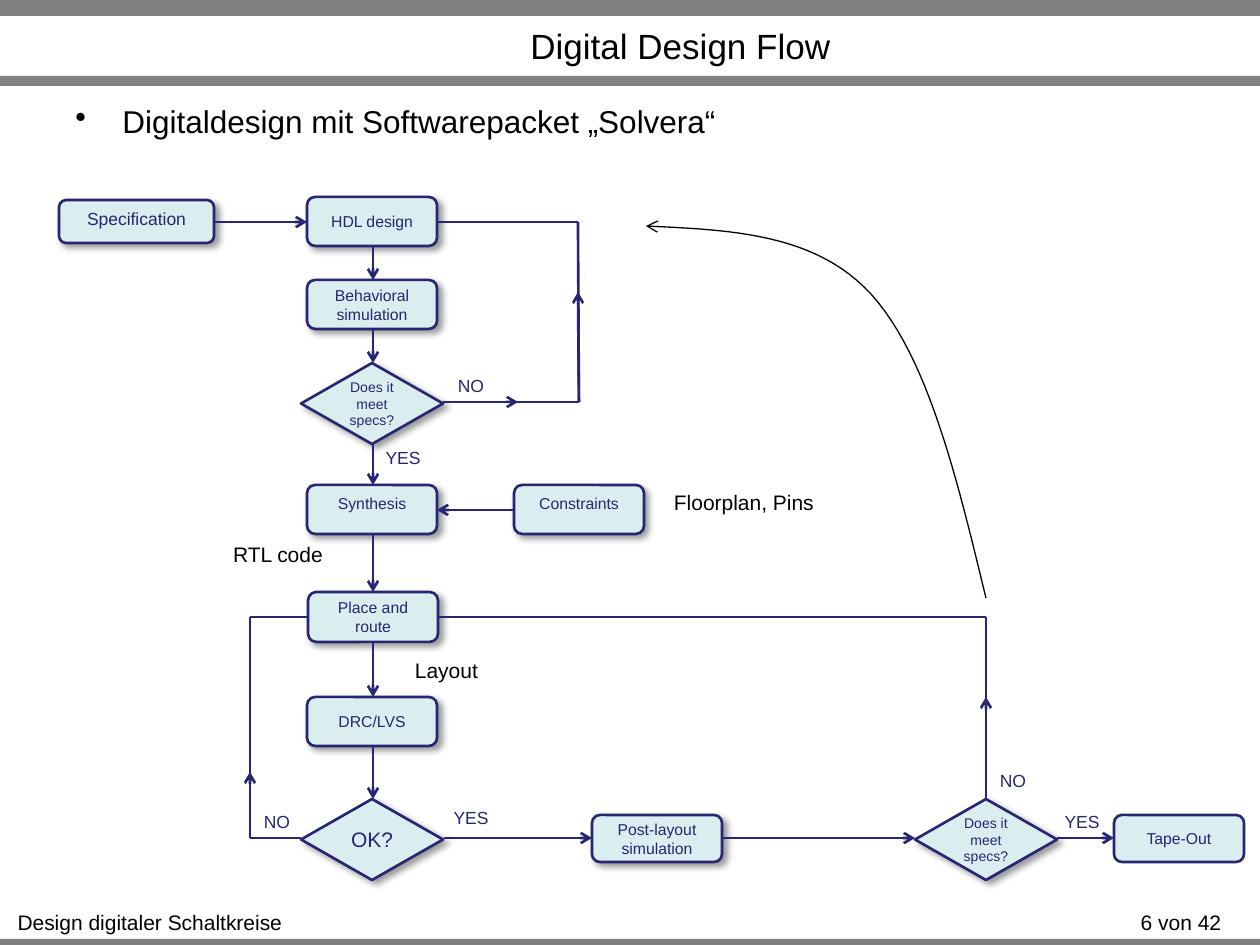
from dataclasses import dataclass

from lxml.etree import SubElement
from pptx import Presentation
from pptx.dml.color import RGBColor
from pptx.enum.shapes import MSO_CONNECTOR, MSO_SHAPE
from pptx.enum.text import MSO_ANCHOR, PP_ALIGN
from pptx.oxml.ns import qn
from pptx.util import Pt

SCALE = 914400 / 126  # EMU in one px


@dataclass(frozen=True)
class Theme:
    ink: RGBColor = RGBColor(0, 0, 0)
    navy: RGBColor = RGBColor(0x26, 0x26, 0x73)
    pale: RGBColor = RGBColor(0xDA, 0xED, 0xEF)
    grey: RGBColor = RGBColor(0x80, 0x80, 0x80)
    font: str = "Arial"
    title: int = 20
    body: int = 18
    note: int = 12
    label: int = 10
    step: int = 9
    test: int = 8
    bold: float = 1.5
    thin: float = 0.75


THEME = Theme()
TOP, MID = MSO_ANCHOR.TOP, MSO_ANCHOR.MIDDLE
STEP, TEST = MSO_SHAPE.ROUNDED_RECTANGLE, MSO_SHAPE.FLOWCHART_DECISION


def emu(*vals):
    return [round(v * SCALE) for v in vals]


def shift(box, x, y):
    return box[0] + x, box[1] + y


def assign(item, vals):
    for name, val in vals.items():
        setattr(item, name, val)


def write(shape, text, size, color, align=PP_ALIGN.CENTER, **frame):
    area = shape.text_frame
    assign(area, frame)
    area.text = text
    for para in area.paragraphs:
        para.alignment = align
        assign(para.font, {"name": THEME.font, "size": Pt(size)})
        para.font.color.rgb = color


def label(slide, box, text, size, color, wrap=False, **form):
    shape = slide.shapes.add_textbox(*emu(*box))
    write(shape, text, size, color, word_wrap=wrap, **form)
    return shape


def stroke(shape, color, width, head=False):
    """Style a line, with an open arrowhead at its end if head is set."""
    shape.line.color.rgb = color
    shape.line.width = Pt(width)
    if head:
        line = shape.element.spPr.find(qn("a:ln"))
        SubElement(line, qn("a:tailEnd"), type="arrow")


def shade(shape):
    """Give the shape a soft shadow to the lower right."""
    effect = shape.element.spPr.find(qn("a:effectLst"))
    outer = SubElement(effect, qn("a:outerShdw"), blurRad=str(Pt(4)),
                       dist=str(Pt(3)), dir=str(45 * 60000))
    color = SubElement(outer, qn("a:srgbClr"), val=str(THEME.ink))
    SubElement(color, qn("a:alpha"), val="40000")


def node(slide, box, kind, place, text, size=THEME.step, anchor=MID, deep=True):
    x, y, w, h = place
    shape = slide.shapes.add_shape(kind, *emu(*shift(box, x, y), w, h))
    shape.fill.solid()
    shape.fill.fore_color.rgb = THEME.pale
    stroke(shape, THEME.navy, THEME.bold)
    shape.shadow.inherit = False
    if deep:
        shade(shape)
    form = {"vertical_anchor": anchor, "word_wrap": True}
    if kind == TEST:
        form |= {f"margin_{side}": 0 for side in ("left", "top", "right", "bottom")}
    write(shape, text, size, THEME.navy, **form)


def link(slide, box, x1, y1, x2, y2, head=True):
    ends = emu(*shift(box, x1, y1), *shift(box, x2, y2))
    line = slide.shapes.add_connector(MSO_CONNECTOR.STRAIGHT, *ends)
    stroke(line, THEME.navy, THEME.bold, head)
    SubElement(line.element.spPr, qn("a:effectLst"))


def route(slide, box, *points):
    """Join the points by plain lines."""
    for start, end in zip(points, points[1:]):
        link(slide, box, *start, *end, head=False)


def answer(slide, box, x, y, text):
    label(slide, (*shift(box, x, y), 60 if text == "YES" else 52, 34),
          text, THEME.label, THEME.navy)


def frame(slide, box):
    """Draw the grey bars and the footer."""
    for y, h in ((939, 10), (0, 16), (76, 10)):
        bar = slide.shapes.add_shape(
            MSO_SHAPE.RECTANGLE, *emu(*shift(box, 0, y), box[2], h))
        bar.fill.solid()
        bar.fill.fore_color.rgb = THEME.grey
        bar.line.fill.background()
        bar.shadow.inherit = False
    for x, w, text in ((4, 292, "Design digitaler Schaltkreise"),
                       (1113, 136, "6 von 42")):
        label(slide, (*shift(box, x, 903), w, 38), text, THEME.note, THEME.ink)


def bullet(slide, box, text):
    shape = label(slide, box, text, THEME.body, THEME.ink, True,
                  align=PP_ALIGN.LEFT)
    indent = emu(47)[0]
    props = shape.text_frame.paragraphs[0]._p.get_or_add_pPr()
    props.set("marL", str(indent))
    props.set("indent", str(-indent))
    props.insert(0, SubElement(props, qn("a:buChar"), char="•"))


def front(slide, box):
    """Draw the flow from specification to synthesis."""
    node(slide, box, STEP, (0, 4, 155, 43), "Specification", THEME.label, TOP)
    for x, y, text, anchor in (
            (248, 1, "HDL design", MID),
            (248, 84, "Behavioral\nsimulation", MID),
            (248, 289, "Synthesis", TOP),
            (455, 289, "Constraints", TOP)):
        node(slide, box, STEP, (x, y, 130, 49), text, anchor=anchor)
    node(slide, box, TEST, (242, 167, 142, 81), "Does it\vmeet\vspecs?", THEME.test)
    for top, end in ((50, 84), (133, 167), (247, 289), (338, 396)):
        link(slide, box, 314, top, 314, end)
    link(slide, box, 155, 26, 248, 26)
    link(slide, box, 455, 314, 378, 314)
    route(slide, box, (384, 206), (520, 206), (519, 26), (378, 26))
    link(slide, box, 414, 206, 459, 206)
    link(slide, box, 520, 206, 519, 96)
    answer(slide, box, 314, 245, "YES")
    answer(slide, box, 386, 173, "NO")


def back(slide, box):
    """Draw the flow from place and route to tape-out."""
    for x, y, h, text in ((58, 0, 50, "Place and route"),
                          (57, 105, 49, "DRC/LVS"),
                          (342, 223, 47, "Post-layout simulation"),
                          (864, 223, 47, "Tape-Out")):
        node(slide, box, STEP, (x, y, 130, h), text, deep=text != "Tape-Out")
    for x, text, size in ((51, "OK?", THEME.note),
                          (665, "Does it\vmeet\vspecs?", THEME.test)):
        node(slide, box, TEST, (x, 207, 142, 81), text, size)
    for top, end in ((50, 105), (154, 207)):
        link(slide, box, 123, top, 123, end)
    for left, end in ((194, 342), (472, 665), (807, 864)):
        link(slide, box, left, 246, end, 246)
    route(slide, box, (51, 246), (0, 246), (0, 25), (58, 25))
    route(slide, box, (736, 207), (736, 25), (188, 25))
    link(slide, box, 0, 246, 0, 180)
    link(slide, box, 736, 133, 736, 105)
    for x, y, text in ((191, 209, "YES"), (802, 213, "YES"),
                       (737, 172, "NO"), (1, 213, "NO")):
        answer(slide, box, x, y, text)


def curve(p0, p1, p2, p3, steps=24):
    """List points along a cubic Bezier curve, without its start."""
    for i in range(1, steps + 1):
        t = i / steps
        u = 1 - t
        yield tuple(u**3 * a + 3 * u * u * t * b + 3 * u * t * t * c + t**3 * d
                    for a, b, c, d in zip(p0, p1, p2, p3))


def sweep(slide, box):
    """Draw the curved arrow from lower right to upper left."""
    knots = [shift(box, x, y) for x, y in (
        (340, 372), (311, 252), (282, 131), (225, 68), (169, 7), (84, 4), (0, 0))]
    points = [*curve(*knots[:4]), *curve(*knots[3:])]
    path = slide.shapes.build_freeform(*emu(*knots[0]))
    path.add_line_segments([emu(*p) for p in points], close=False)
    shape = path.convert_to_shape()
    shape.fill.background()
    stroke(shape, THEME.ink, THEME.thin, True)
    shape.shadow.inherit = False


def main():
    deck = Presentation()
    assign(deck, dict(zip(("slide_width", "slide_height"), emu(1260, 945))))
    slide = deck.slides.add_slide(deck.slide_layouts[6])
    frame(slide, (0, 0, 1260, 945))
    front(slide, (59, 196, 586, 339))
    back(slide, (250, 592, 994, 288))
    label(slide, (164, 18, 1033, 48), "Digital Design Flow",
          THEME.title, THEME.ink, True)
    for box, text in (((220, 535, 116, 38), "RTL code"),
                      ((402, 651, 89, 38), "Layout"),
                      ((661, 483, 166, 38), "Floorplan, Pins")):
        label(slide, box, text, THEME.note, THEME.ink)
    sweep(slide, (646, 226, 340, 372))
    bullet(slide, (63, 96, 1134, 824), "Digitaldesign mit Softwarepacket „Solvera“")
    deck.save("out.pptx")


if __name__ == "__main__":
    main()
